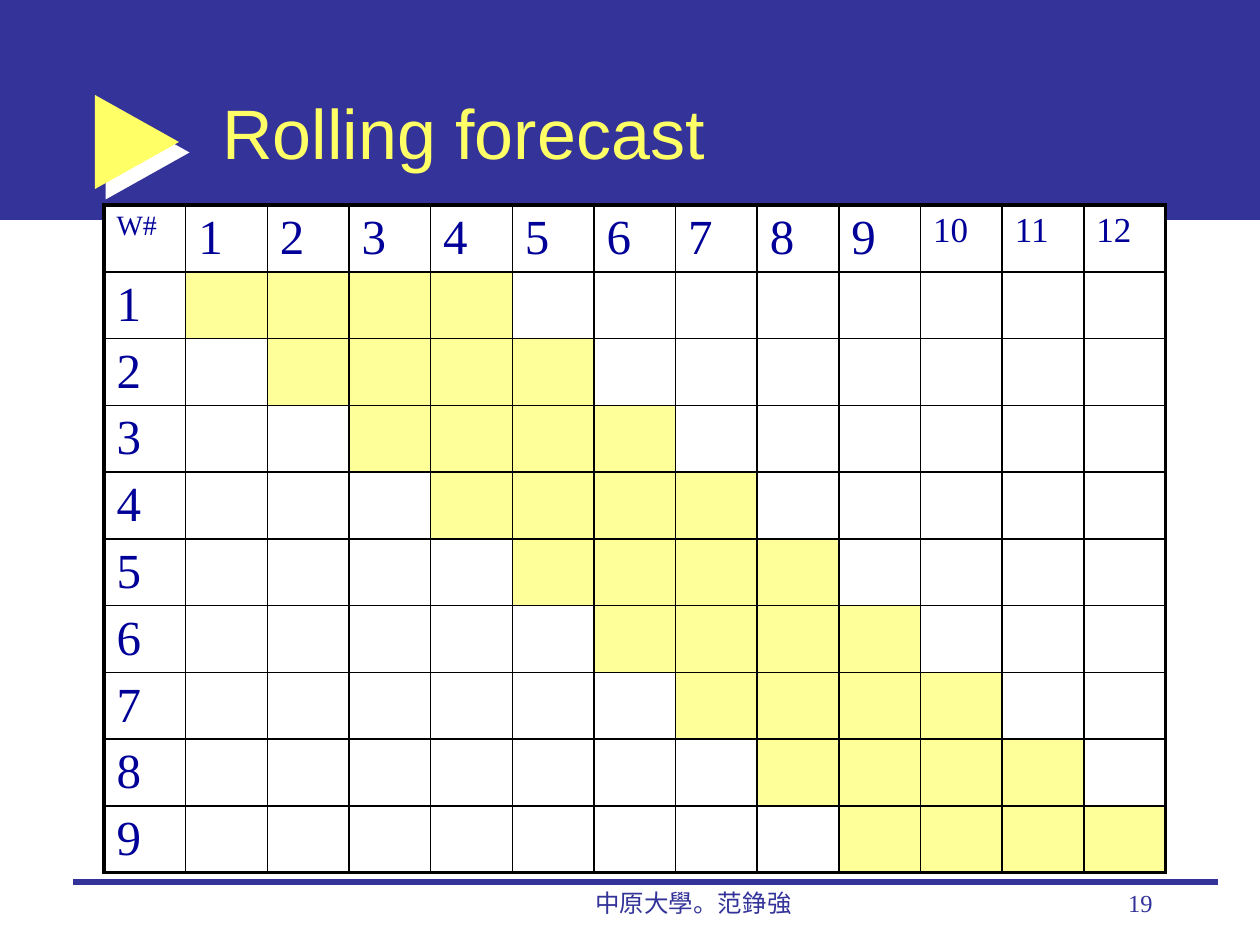
from lxml.etree import SubElement
from pptx import Presentation
from pptx.dml.color import RGBColor
from pptx.enum.shapes import MSO_CONNECTOR, MSO_SHAPE
from pptx.enum.text import MSO_ANCHOR, PP_ALIGN
from pptx.oxml.ns import qn
from pptx.util import Pt

EMU_PER_PX = 914400 / 126
BLUE, NAVY, YELLOW, PALE = "333399", "000099", "FFFF66", "FFFF99"
WHITE, BLACK = "FFFFFF", "000000"
SERIF, SANS = "Times New Roman", "Arial"
WEEKS, PLANS, HORIZON = 12, 9, 4


def px(length):
    """Turn pixels into EMU."""
    return round(length * EMU_PER_PX)


def color(value):
    """Turn a hex string into a colour."""
    return RGBColor.from_string(value)


def style_font(paragraph, name, size, value):
    """Set the font of a whole paragraph."""
    font = paragraph.font
    font.name, font.size = name, Pt(size)
    font.color.rgb = color(value)


def add_text(slide, box, text, name, size, value, align=PP_ALIGN.LEFT, anchor=MSO_ANCHOR.TOP):
    """Add a one-paragraph text box."""
    frame = slide.shapes.add_textbox(*map(px, box)).text_frame
    frame.word_wrap = True
    frame.vertical_anchor = anchor
    paragraph = frame.paragraphs[0]
    paragraph.text, paragraph.alignment = text, align
    style_font(paragraph, name, size, value)


def add_solid(slide, kind, box, value):
    """Add a filled shape without outline or shadow."""
    shape = slide.shapes.add_shape(kind, *map(px, box))
    shape.shadow.inherit = False
    shape.fill.solid()
    shape.fill.fore_color.rgb = color(value)
    shape.line.fill.background()
    return shape


def add_header(slide, box, title):
    """Draw the title band with its pointer and title."""
    left, top, width, height = box
    add_solid(slide, MSO_SHAPE.RECTANGLE, box, BLUE)
    pointer = add_solid(slide, MSO_SHAPE.RIGHT_ARROW, (left + 95, top + 95, 84, 94), YELLOW)
    pointer.adjustments[0], pointer.adjustments[1] = 0.38, 1
    effects = pointer._element.spPr.find(qn("a:effectLst"))
    shadow = SubElement(effects, qn("a:outerShdw"), dist=str(Pt(8.5)), dir="2700000",
                        algn="ctr", rotWithShape="0")
    SubElement(shadow, qn("a:srgbClr"), val=WHITE)
    add_text(slide, (left + 210, top + 53, width - 305, height - 63), title, SANS, 40, YELLOW,
             anchor=MSO_ANCHOR.MIDDLE)


def add_footer(slide, box, author, number):
    """Draw the rule, author and page number."""
    left, top, width, height = box
    rule = slide.shapes.add_connector(MSO_CONNECTOR.STRAIGHT, px(left), px(top),
                                      px(left + width), px(top))
    rule.line.color.rgb = color(BLUE)
    rule.line.width = Pt(3)
    SubElement(rule._element.spPr, qn("a:effectLst"))
    add_text(slide, (left + 421, top, 399, height), author, SERIF, 14, BLUE, PP_ALIGN.CENTER)
    add_text(slide, (left + 830, top, 262, height), number, SERIF, 14, BLUE, PP_ALIGN.RIGHT)


def set_borders(cell, outer):
    """Draw cell borders, heavier on the outer sides of the table."""
    properties = cell._tc.get_or_add_tcPr()
    for side in "LRTB":
        width = Pt(2.25 if side in outer else 1)
        line = SubElement(properties, qn(f"a:ln{side}"), w=str(width))
        fill = SubElement(line, qn("a:solidFill"))
        SubElement(fill, qn("a:srgbClr"), val=BLACK)


def outer_sides(row, column):
    """Name the sides of a cell that lie on the table's edge."""
    edges = {"L": column == 0, "R": column == WEEKS, "T": row == 0, "B": row == PLANS}
    return [side for side, on_edge in edges.items() if on_edge]


def label(row, column):
    """Give the text and size of a cell."""
    if row == column == 0:
        return "W#", 16
    if row and column:
        return "", 18
    week = row or column
    return str(week), 28 if week < 10 else 20


def add_forecast(slide, box):
    """Draw the grid in which each week forecasts the next four."""
    table = slide.shapes.add_table(PLANS + 1, WEEKS + 1, *map(px, box)).table
    table.first_row = table.horz_banding = False
    for row in range(PLANS + 1):
        for column in range(WEEKS + 1):
            cell = table.cell(row, column)
            cell.margin_top, cell.margin_bottom = px(6), 0
            set_borders(cell, outer_sides(row, column))
            planned = row and row <= column < row + HORIZON
            cell.fill.solid()
            cell.fill.fore_color.rgb = color(PALE if planned else WHITE)
            text, size = label(row, column)
            paragraph = cell.text_frame.paragraphs[0]
            paragraph.text = text
            style_font(paragraph, SERIF, size, NAVY)


def main():
    """Build the slide and save it."""
    presentation = Presentation()
    presentation.slide_width, presentation.slide_height = px(1260), px(945)
    slide = presentation.slides.add_slide(presentation.slide_layouts[6])
    add_header(slide, (0, 0, 1260, 220), "Rolling forecast")
    add_footer(slide, (73, 882, 1145, 63), "中原大學。范錚強", "19")
    add_forecast(slide, (104, 205, 1062, 668))
    presentation.save("out.pptx")


if __name__ == "__main__":
    main()
